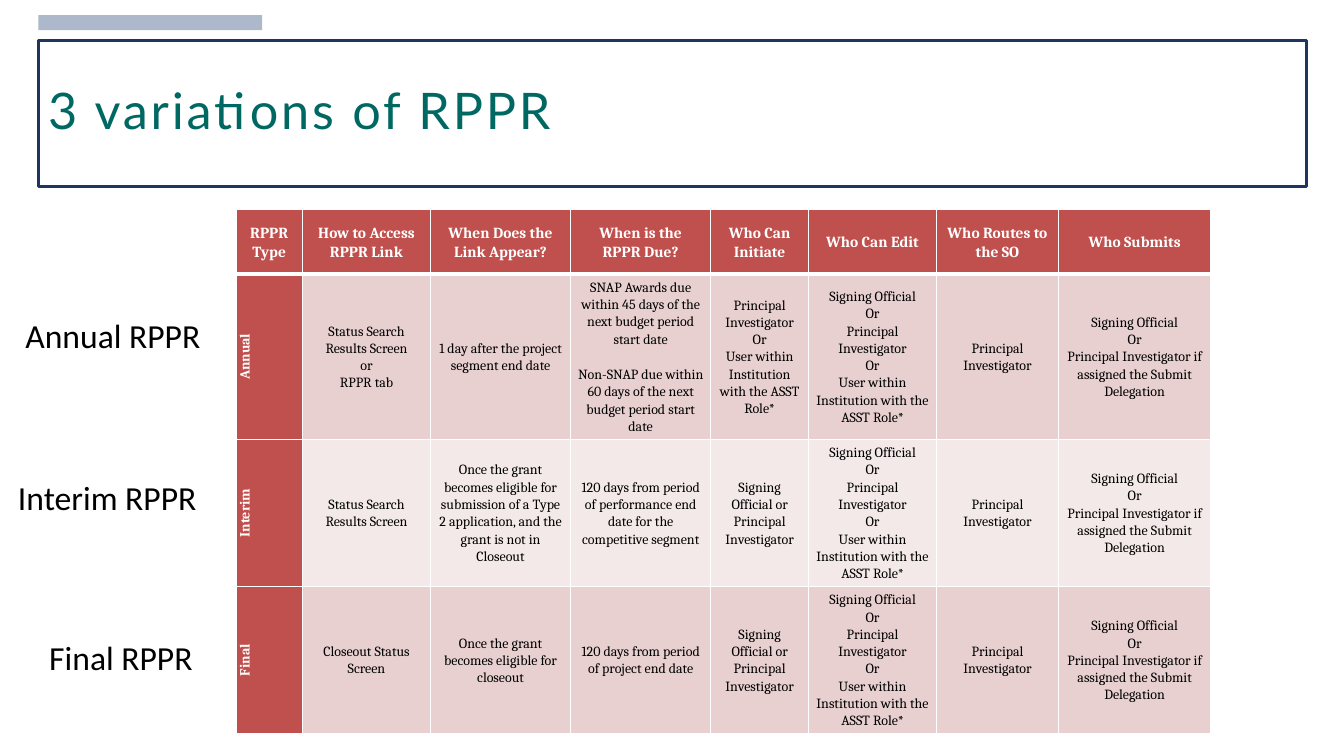
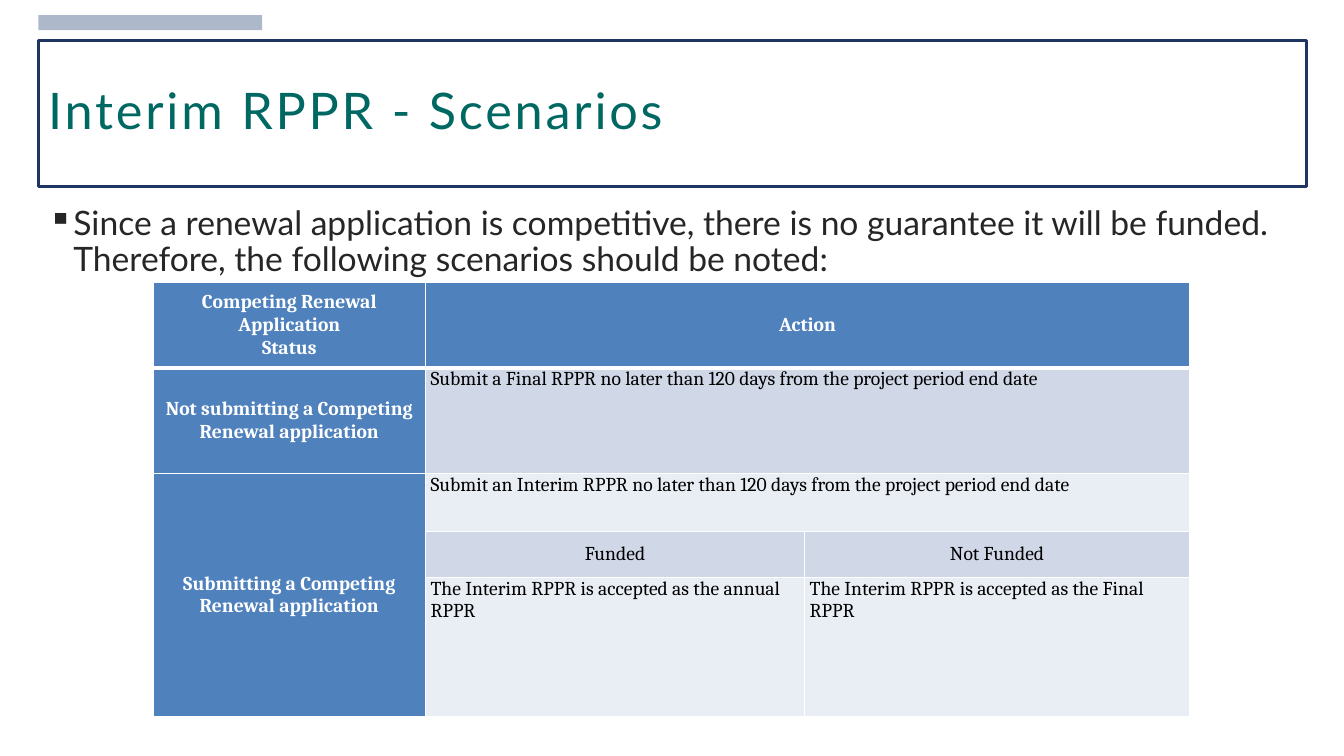
from lxml import etree
from pptx import Presentation
from pptx import util as u
from pptx.dml.color import RGBColor
from pptx.enum import shapes, text
from pptx.oxml.ns import qn

HUES = {
    "band": "ADB9CA", "frame": "1D3560", "title": "006863", "body": "262626",
    "black": "000000", "white": "FFFFFF",
    "red": "C0504D", "rose": "E8D0D0", "blush": "F4E9E9",
    "blue": "4F81BD", "sky": "D0D8E8", "mist": "E9EDF4",
}
RGB = {name: RGBColor.from_string(code) for name, code in HUES.items()}
LEFT, MID = text.PP_ALIGN.LEFT, text.PP_ALIGN.CENTER


def write(frame, words, font, size, hue, bold=False, align=LEFT, lead=1.0):
    """Put each line of words in its own paragraph, all in one style."""
    frame.word_wrap = True
    frame.text = words
    for para in frame.paragraphs:
        para.alignment, para.line_spacing = align, lead
        para.font.name, para.font.size = font, u.Pt(size)
        para.font.color.rgb, para.font.bold = RGB[hue], bold


def dress(cell, fill, pad, rim, thick):
    """Fill a cell, set its margins and draw white borders; thick names the 3 pt side."""
    cell.margin_left = cell.margin_right = u.Inches(pad)
    cell.margin_top = cell.margin_bottom = u.Inches(rim)
    props = cell._tc.get_or_add_tcPr()
    for i, side in enumerate("LRTB"):
        width = u.Pt(3 if side == thick else 1)
        line = etree.Element(qn(f"a:ln{side}"), w=str(width))
        solid = etree.SubElement(line, qn("a:solidFill"))
        etree.SubElement(solid, qn("a:srgbClr"), val=HUES["white"])
        props.insert(i, line)
    cell.fill.solid()
    cell.fill.fore_color.rgb = RGB[fill]


deck = Presentation()
deck.slide_width, deck.slide_height = u.Inches(13.33), u.Inches(7.5)

# Band and framed title on every slide
slides = []
for title in ("3 variations of RPPR", "Interim RPPR - Scenarios"):
    slide = deck.slides.add_slide(deck.slide_layouts[6])
    band = slide.shapes.add_shape(
        shapes.MSO_SHAPE.RECTANGLE,
        u.Inches(0.38), u.Inches(0.15), u.Inches(2.22), u.Inches(0.15))
    band.shadow.inherit = False
    band.fill.solid()
    band.fill.fore_color.rgb = RGB["band"]
    band.line.fill.background()

    box = slide.shapes.add_textbox(
        u.Inches(0.38), u.Inches(0.4), u.Inches(12.58), u.Inches(1.45))
    box.line.color.rgb, box.line.width = RGB["frame"], u.Pt(2)
    write(box.text_frame, title, "Lato", 36, "title", lead=0.9)
    box.text_frame.vertical_anchor = text.MSO_ANCHOR.MIDDLE
    run = box.text_frame.paragraphs[0].runs[0]
    run.font._element.set("spc", "200")
    slides.append(slide)
first, second = slides

# Slide 1: labels beside the table rows
for label, left, top, width, align in (
    ("Annual RPPR", 0.03, 3.08, 2.18, MID),
    ("Interim RPPR", 0.08, 4.68, 2.15, LEFT),
    ("Final RPPR", 0.39, 6.27, 1.84, LEFT),
):
    box = first.shapes.add_textbox(
        u.Inches(left), u.Inches(top), u.Inches(width), u.Inches(0.5))
    write(box.text_frame, label, "Calibri", 24, "black", align=align)

# Slide 1: table of report types
lead = "Principal Investigator"
start = "Signing Official or Principal Investigator"
user = "User within Institution with the ASST Role*"
edit = f"Signing Official\nOr\n{lead}\nOr\n{user}"
submit = f"Signing Official\nOr\n{lead} if assigned the Submit Delegation"
rows = [
    ["RPPR Type", "How to Access RPPR Link", "When Does the Link Appear?",
     "When is the RPPR Due?", "Who Can Initiate", "Who Can Edit",
     "Who Routes to the SO", "Who Submits"],
    ["Annual", "Status Search Results Screen\nor\nRPPR tab",
     "1 day after the project segment end date",
     "SNAP Awards due within 45 days of the next budget period start date\n"
     "Non-SNAP due within 60 days of the next budget period start date",
     f"{lead}\nOr\n{user}", edit, lead, submit],
    ["Interim", "Status Search Results Screen",
     "Once the grant becomes eligible for submission of a Type 2 application, "
     "and the grant is not in Closeout",
     "120 days from period of performance end date for the competitive segment",
     start, edit, lead, submit],
    ["Final", "Closeout Status Screen",
     "Once the grant becomes eligible for closeout",
     "120 days from period of project end date",
     start, edit, lead, submit],
]
wide = [0.66, 1.27, 1.39, 1.39, 0.97, 1.27, 1.21, 1.51]
tall = [0.64, 1.64, 1.46, 1.46]
grid = first.shapes.add_table(
    len(tall), len(wide), u.Inches(2.34), u.Inches(2.08),
    u.Inches(sum(wide)), u.Inches(sum(tall))).table
for col, width in zip(grid.columns, wide):
    col.width = u.Inches(width)
for r, row in enumerate(rows):
    grid.rows[r].height = u.Inches(tall[r])
    for c, words in enumerate(row):
        cell = grid.cell(r, c)
        head = r == 0 or c == 0
        fill = "red" if head else "rose" if r % 2 else "blush"
        dress(cell, fill, 0.07 if r else 0.08, 0 if r else 0.02,
              {0: "B", 1: "T"}.get(r))
        write(cell.text_frame, words, "Cambria", 10 if r else 11,
              "white" if head else "black", head, MID, 1.07)
        cell.vertical_anchor = text.MSO_ANCHOR.MIDDLE
        if r and c == 0:
            cell._tc.tcPr.set("vert", "vert270")
grid.cell(1, 3).text_frame.paragraphs[1].space_before = u.Pt(13)

# Slide 2: bullet
box = second.shapes.add_textbox(
    u.Inches(0.38), u.Inches(2), u.Inches(12.58), u.Inches(0.8))
write(box.text_frame,
      "Since a renewal application is competitive, there is no guarantee it will "
      "be funded. Therefore, the following scenarios should be noted:",
      "Lato", 24, "body", lead=0.9)
para = box.text_frame.paragraphs[0]
para.space_before = u.Pt(10)
props = para._p.get_or_add_pPr()
props.set("marL", str(u.Inches(0.25)))
props.set("indent", str(u.Inches(-0.25)))
mark = etree.Element(qn("a:buChar"), char="▪")
props.find(qn("a:spcBef")).addnext(mark)

# Slide 2: table of scenarios
wide = [2.7, 3.76, 3.82]
tall = [0.85, 1.05, 0.57, 0.46, 1.38]
rows = [
    ["Competing Renewal Application\nStatus", "Action", ""],
    ["Not submitting a Competing Renewal application",
     "Submit a Final RPPR no later than 120 days from the project period end date", ""],
    ["Submitting a Competing Renewal application",
     "Submit an Interim RPPR no later than 120 days from the project period end date", ""],
    ["", "Funded", "Not Funded"],
    ["", "The Interim RPPR is accepted as the annual RPPR",
     "The Interim RPPR is accepted as the Final RPPR"],
]
grid = second.shapes.add_table(
    len(tall), len(wide), u.Inches(1.52), u.Inches(2.8),
    u.Inches(sum(wide)), u.Inches(sum(tall))).table
for col, width in zip(grid.columns, wide):
    col.width = u.Inches(width)
for r in range(3):
    grid.cell(r, 1).merge(grid.cell(r, 2))
grid.cell(2, 0).merge(grid.cell(4, 0))
for r, row in enumerate(rows):
    grid.rows[r].height = u.Inches(tall[r])
    for c, words in enumerate(row):
        cell = grid.cell(r, c)
        head = r == 0 or c == 0
        mid = head or r == 3
        fill = "blue" if head else "sky" if r % 2 else "mist"
        dress(cell, fill, 0.05, 0, {0: "B", 1: "T"}.get(r))
        if words:
            write(cell.text_frame, words, "Cambria", 14,
                  "white" if head else "black", head, MID if mid else LEFT)
        if mid:
            cell.vertical_anchor = text.MSO_ANCHOR.MIDDLE

deck.save("out.pptx")
